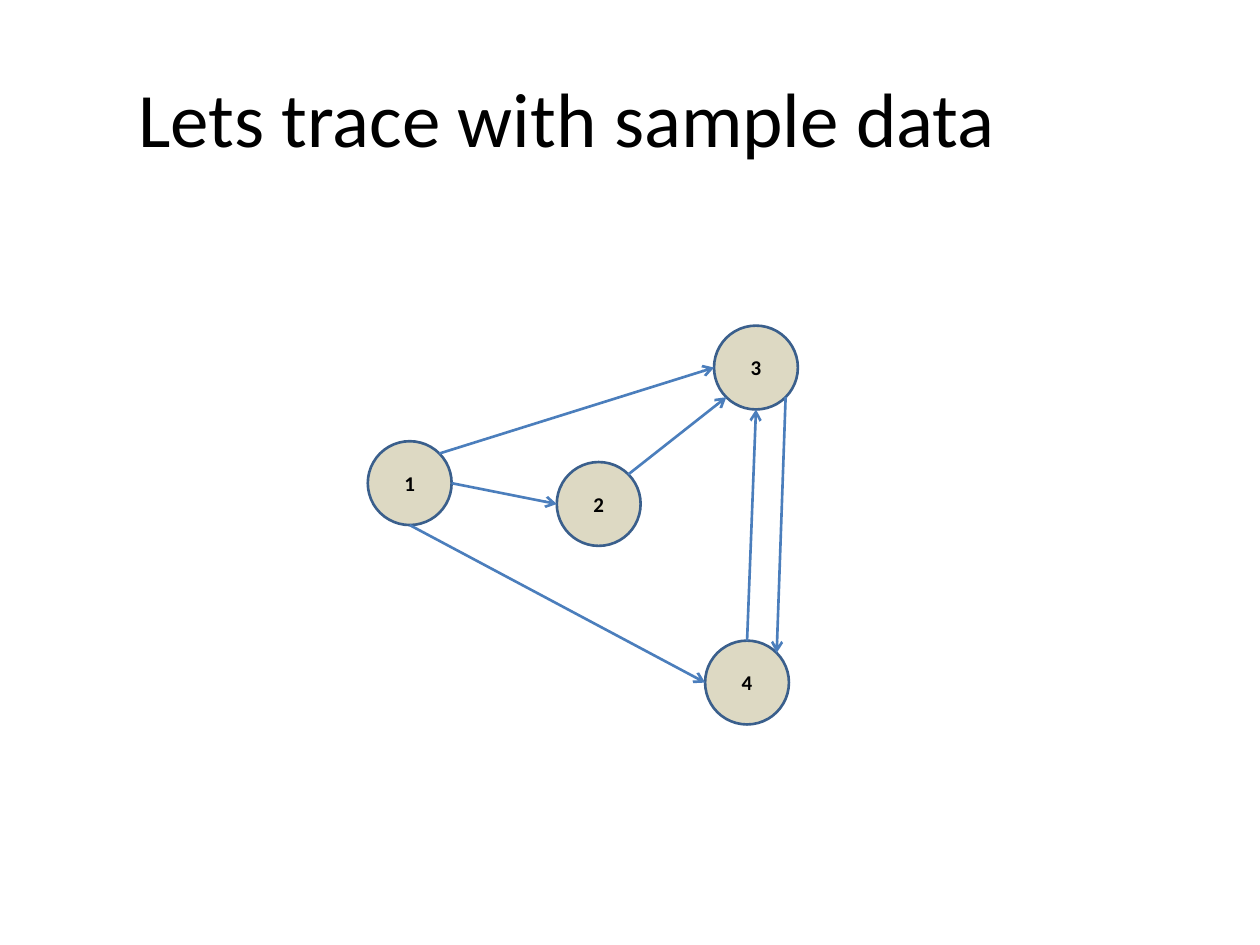
"""Build a slide with a small directed graph of four numbered nodes."""
from math import cos, radians, sin

from lxml.etree import SubElement
from pptx import Presentation
from pptx.dml.color import RGBColor
from pptx.enum.shapes import MSO_CONNECTOR as CONN, MSO_SHAPE as SHAPE
from pptx.enum.text import MSO_ANCHOR as ANCHOR, PP_ALIGN as ALIGN
from pptx.oxml.ns import qn
from pptx.util import Cm, Pt

COLORS = {"text": "000000", "node": "DDD9C3", "outline": "3A5F8C", "edge": "4B7EBC"}
SIZE = 1.69
TITLE_FONT = {"name": "Calibri", "size": Pt(44), "bold": False}
NODE_FONT = {"name": "Calibri", "size": Pt(12), "bold": True}
NODES = {"1": (8.26, 9.74), "2": (12.07, 10.16), "4": (15.06, 13.76), "3": (15.24, 7.41)}
ANGLES = {"right": 0, "bottom right": 45, "bottom": 90, "bottom left": 135,
          "left": 180, "top": 270, "top right": 315}
EDGES = [
    ("1", "top right", "3", "left"),
    ("1", "right", "2", "left"),
    ("2", "top right", "3", "bottom left"),
    ("1", "bottom", "4", "left"),
    ("4", "top", "3", "bottom"),
    ("3", "bottom right", "4", "top right"),
]


def write(sp, text, font):
    tf = sp.text_frame
    tf.word_wrap = True
    tf.vertical_anchor = ANCHOR.MIDDLE
    p = tf.paragraphs[0]
    p.alignment = ALIGN.CENTER
    r = p.add_run()
    r.text = text
    for key, value in font.items():
        setattr(r.font, key, value)
    r.font.color.rgb = RGBColor.from_string(COLORS["text"])


def rim(node, side):
    x, y = NODES[node]
    a = radians(ANGLES[side])
    return Cm(x + SIZE / 2 * cos(a)), Cm(y + SIZE / 2 * sin(a))


prs = Presentation()
prs.slide_width, prs.slide_height = Cm(25.4), Cm(19.05)
s = prs.slides.add_slide(prs.slide_layouts[6])

title = s.shapes.add_textbox(Cm(0), Cm(0.76), Cm(22.86), Cm(3.18))
write(title, "Lets trace with sample data", TITLE_FONT)

graph = s.shapes.add_group_shape()
for label, (x, y) in NODES.items():
    sp = graph.shapes.add_shape(
        SHAPE.OVAL, Cm(x - SIZE / 2), Cm(y - SIZE / 2), Cm(SIZE), Cm(SIZE))
    sp.shadow.inherit = False
    sp.fill.solid()
    sp.fill.fore_color.rgb = RGBColor.from_string(COLORS["node"])
    sp.line.color.rgb = RGBColor.from_string(COLORS["outline"])
    sp.line.width = Pt(1.5)
    write(sp, label, NODE_FONT)

for start, start_side, end, end_side in EDGES:
    edge = graph.shapes.add_connector(
        CONN.STRAIGHT, *rim(start, start_side), *rim(end, end_side))
    edge.line.color.rgb = RGBColor.from_string(COLORS["edge"])
    edge.line.width = Pt(1.5)
    SubElement(edge.line._get_or_add_ln(), qn("a:tailEnd"), type="arrow")
    SubElement(edge._element.spPr, qn("a:effectLst"))

prs.save("out.pptx")
